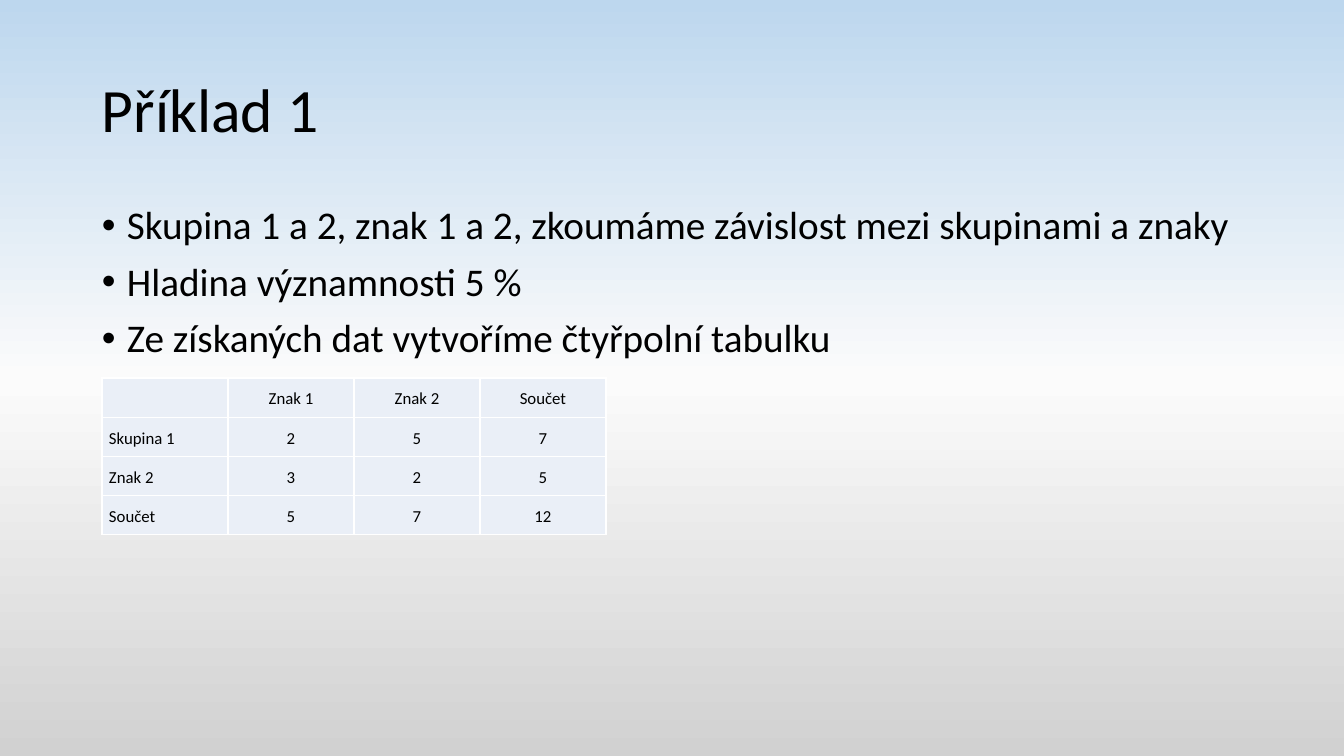
from copy import deepcopy
from dataclasses import dataclass

from lxml import etree
from pptx import Presentation
from pptx.dml.color import RGBColor
from pptx.enum.text import MSO_ANCHOR, PP_ALIGN
from pptx.oxml.ns import qn
from pptx.util import Emu, Pt

MIDDLE = MSO_ANCHOR.MIDDLE
CENTER, JUSTIFY = PP_ALIGN.CENTER, PP_ALIGN.JUSTIFY
EMU_PER_PX = 914400 / 100.8


def px(length):
    return Emu(round(length * EMU_PER_PX))


@dataclass(frozen=True)
class Theme:
    font: str = "Calibri"
    ink: str = "000000"
    cell: str = "EAEFF7"
    border: str = "FFFFFF"
    backdrop: tuple = ((0, "BDD7EE"), (0.5, "FBFBFB"), (1, "D1D1D1"))
    title_size: int = 44
    body_size: int = 28
    table_size: int = 12


class SlideBuilder:
    def __init__(self, page, theme):
        self.page = page
        self.theme = theme

    def background(self):
        fill = self.page.background.fill
        fill.gradient()
        fill.gradient_angle = 270
        stop_list = next(self.page.element.iter(qn("a:gsLst")))
        stop_list.insert(1, deepcopy(stop_list[0]))
        for stop, (position, color) in zip(fill.gradient_stops, self.theme.backdrop):
            stop.position = position
            stop.color.rgb = RGBColor.from_string(color)

    def style(self, para, size, line_spacing):
        para.line_spacing = line_spacing
        for span in para.runs:
            span.font.name = self.theme.font
            span.font.size = Pt(size)
            span.font.color.rgb = RGBColor.from_string(self.theme.ink)

    def text(self, left, top, width, height, content, size):
        box = self.page.shapes.add_textbox(px(left), px(top), px(width), px(height))
        frame = box.text_frame
        frame.word_wrap = True
        frame.text = content
        for para in frame.paragraphs:
            self.style(para, size, 0.9)
        return frame

    def title(self, left, top, width, height, content):
        frame = self.text(left, top, width, height, content, self.theme.title_size)
        frame.vertical_anchor = MIDDLE

    def bullets(self, left, top, width, height, items):
        frame = self.text(left, top, width, height, "\n".join(items), self.theme.body_size)
        for para in frame.paragraphs:
            para.space_before = Pt(10)
            properties = para._p.get_or_add_pPr()
            properties.set("marL", str(px(25)))
            properties.set("indent", str(-px(25)))
            etree.SubElement(properties, qn("a:buFont"), typeface="Arial")
            etree.SubElement(properties, qn("a:buChar"), char="•")

    def table(self, left, top, column_width, row_height, rows):
        columns = len(rows[0])
        table = self.page.shapes.add_table(
            len(rows), columns, px(left), px(top),
            px(column_width * columns), px(row_height * len(rows))).table
        table.first_row = table.horz_banding = False
        for column in table.columns:
            column.width = px(column_width)
        for row_index, values in enumerate(rows):
            table.rows[row_index].height = px(row_height)
            for column_index, value in enumerate(values):
                alignment = CENTER if column_index else JUSTIFY
                self.fill_cell(table.cell(row_index, column_index), value, alignment)

    def fill_cell(self, cell, value, alignment):
        cell.fill.solid()
        cell.fill.fore_color.rgb = RGBColor.from_string(self.theme.cell)
        cell.vertical_anchor = MIDDLE
        cell.margin_left = cell.margin_right = px(7)
        cell.margin_top = cell.margin_bottom = px(8 if value else 0)
        if value:
            cell.text = value
            para = cell.text_frame.paragraphs[0]
            para.alignment = alignment
            self.style(para, self.theme.table_size, 1.15)
        self.cell_borders(cell)

    def cell_borders(self, cell):
        properties = cell._tc.get_or_add_tcPr()
        for index, side in enumerate(("lnL", "lnR", "lnT", "lnB")):
            line = etree.Element(qn(f"a:{side}"), w=str(Pt(1)))
            fill = etree.SubElement(line, qn("a:solidFill"))
            etree.SubElement(fill, qn("a:srgbClr"), val=self.theme.border)
            properties.insert(index, line)


def main():
    deck = Presentation()
    deck.slide_width, deck.slide_height = px(1344), px(756)
    page = deck.slides.add_slide(deck.slide_layouts[6])
    builder = SlideBuilder(page, Theme())

    # Backdrop and heading
    builder.background()
    builder.title(92, 40, 1159, 146, "Příklad 1")

    # Task description
    builder.bullets(92, 201, 1159, 480, [
        "Skupina 1 a 2, znak 1 a 2, zkoumáme závislost mezi skupinami a znaky",
        "Hladina významnosti 5 %",
        "Ze získaných dat vytvoříme čtyřpolní tabulku",
    ])

    # Four-field table with totals
    builder.table(102, 378, 126, 39, [
        ["", "Znak 1", "Znak 2", "Součet"],
        ["Skupina 1", "2", "5", "7"],
        ["Znak 2", "3", "2", "5"],
        ["Součet", "5", "7", "12"],
    ])

    deck.save("out.pptx")


if __name__ == "__main__":
    main()
